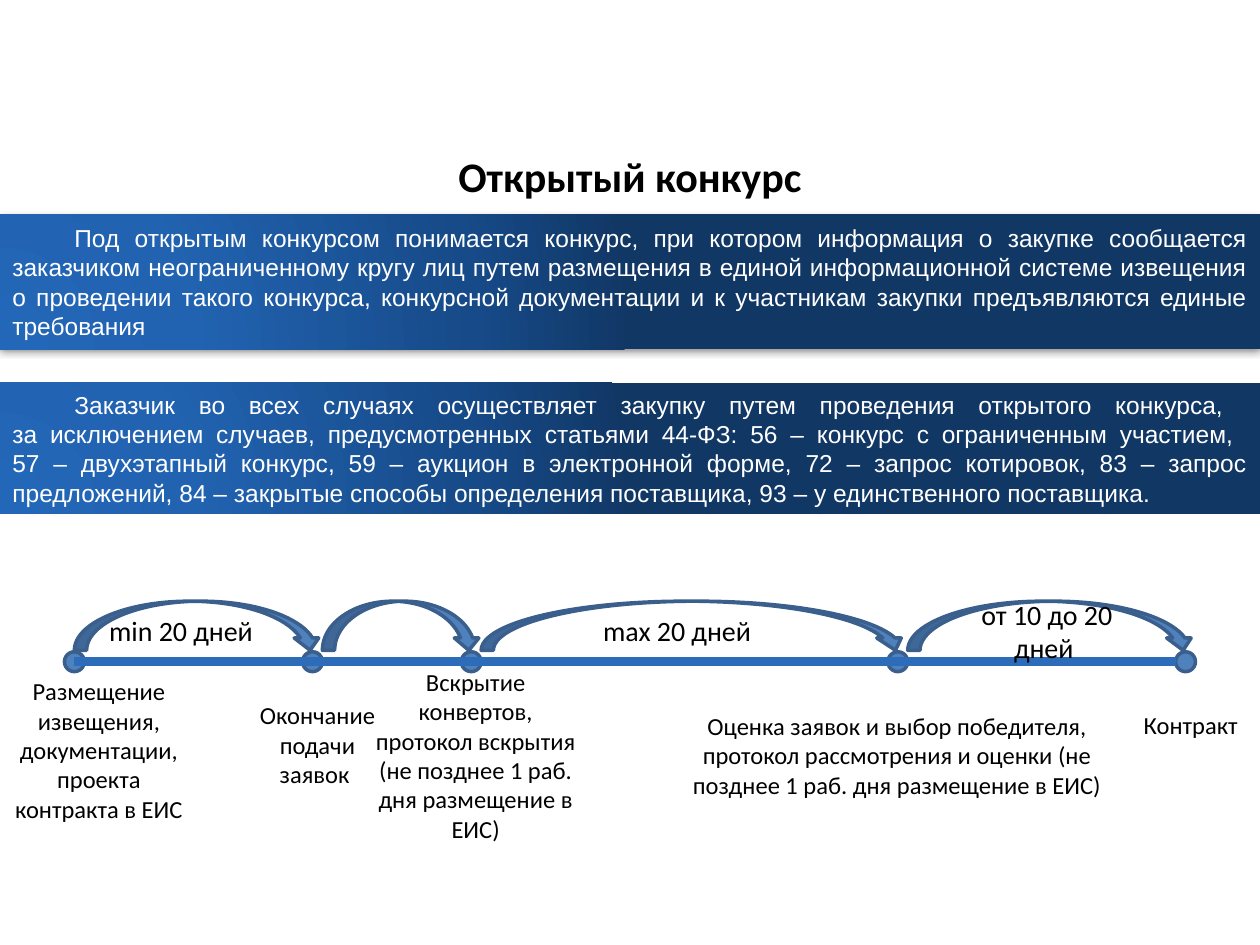
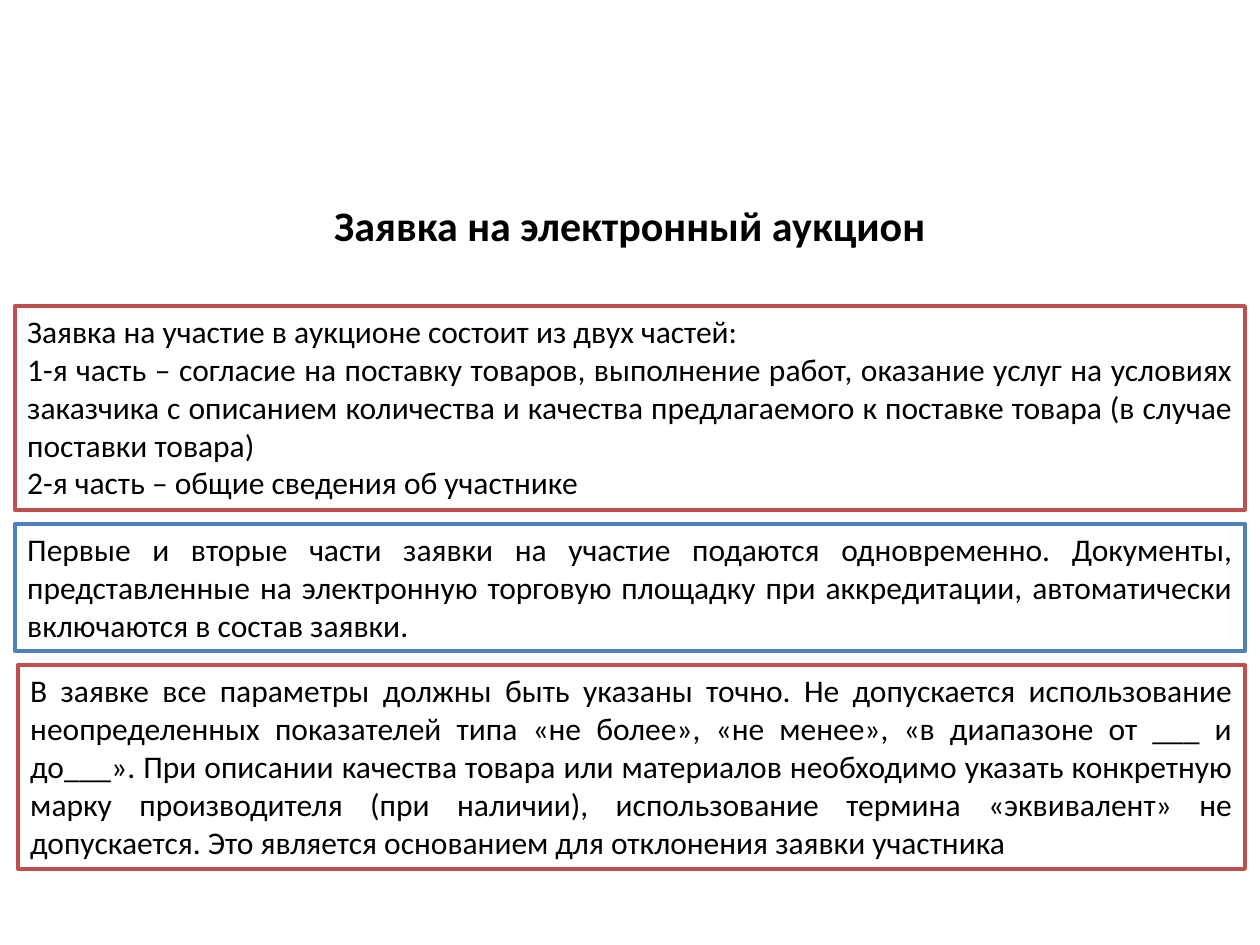
from dataclasses import dataclass
from lxml import etree
from pptx import Presentation
from pptx import util as u
from pptx.dml.color import RGBColor
from pptx.enum import shapes, text
from pptx.oxml import parse_xml
from pptx.oxml.ns import nsdecls, qn

ALIGN = text.PP_ALIGN
ANCHOR = text.MSO_ANCHOR


@dataclass(frozen=True)
class Theme:
    body_font: str = "Calibri"
    band_font: str = "Arial"
    black: str = "000000"
    white: str = "FFFFFF"
    blue: str = "4F81BD"
    blue_edge: str = "3A5F8C"
    axis: str = "2C6CB9"
    red: str = "C0504D"
    band_stops: tuple = ((0, "2367B8"), (30, "2263B1"), (75, "164A88"), (100, "113765"))
    title_size: int = 24
    box_size: int = 18
    duration_size: int = 16
    small_size: int = 14
    edge: int = 2
    axis_width: int = 5


THEME = Theme()
SLIDE_W, SLIDE_H = 25.4, 19.05


def write(sp, paragraphs, size, font=THEME.body_font, color=THEME.black, bold=False,
          align=ALIGN.CENTER, anchor=ANCHOR.MIDDLE, indent=0, grow=False):
    tf = sp.text_frame
    tf.word_wrap = True
    tf.vertical_anchor = anchor
    tf.auto_size = text.MSO_AUTO_SIZE.SHAPE_TO_FIT_TEXT if grow else text.MSO_AUTO_SIZE.NONE
    for i, line in enumerate(paragraphs):
        p = tf.paragraphs[0] if i == 0 else tf.add_paragraph()
        p.text = line
        p.alignment = align
        if indent:
            p._p.get_or_add_pPr().set("indent", str(u.Cm(indent)))
        for br in p._p.findall(qn("a:br")):
            etree.SubElement(br, qn("a:rPr"), sz=str(size * 100))
        for r in p.runs:
            r.font.size = u.Pt(size)
            r.font.name = font
            r.font.bold = bold
            r.font.color.rgb = RGBColor.from_string(color)


class Deck:
    def __init__(self, theme):
        self.theme = theme
        self.prs = Presentation()
        self.prs.slide_width, self.prs.slide_height = u.Cm(SLIDE_W), u.Cm(SLIDE_H)
        self.s = None

    def slide(self, title, title_top):
        self.s = self.prs.slides.add_slide(self.prs.slide_layouts[6])
        self.label([title], 1.27, title_top, 22.86, 3.18, self.theme.title_size, bold=True)

    def label(self, paragraphs, left, top, width, height, size, **fmt):
        sp = self.s.shapes.add_textbox(u.Cm(left), u.Cm(top), u.Cm(width), u.Cm(height))
        write(sp, paragraphs, size, **fmt)

    def shape(self, kind, left, top, width, height, fill, line):
        sp = self.s.shapes.add_shape(kind, u.Cm(left), u.Cm(top), u.Cm(width), u.Cm(height))
        sp.shadow.inherit = False
        sp.fill.solid()
        sp.fill.fore_color.rgb = RGBColor.from_string(fill)
        if line:
            sp.line.color.rgb = RGBColor.from_string(line)
            sp.line.width = u.Pt(self.theme.edge)
        else:
            sp.line.fill.background()
        return sp

    def band(self, content, top, height):
        t = self.theme
        sp = self.shape(shapes.MSO_SHAPE.RECTANGLE, 0, top, SLIDE_W, height, t.white, None)
        stops = "".join(f'<a:gs pos="{pos * 1000}"><a:srgbClr val="{color}"/></a:gs>'
                        for pos, color in t.band_stops)
        spPr = sp._element.spPr
        spPr.replace(spPr.find(qn("a:solidFill")), parse_xml(
            f'<a:gradFill {nsdecls("a")} rotWithShape="1"><a:gsLst>{stops}</a:gsLst>'
            '<a:path path="circle"><a:fillToRect l="5000" t="100000" r="120000" b="10000"/>'
            '</a:path></a:gradFill>'))
        spPr.find(qn("a:effectLst")).append(parse_xml(
            f'<a:outerShdw {nsdecls("a")} blurRad="{u.Pt(4)}" dist="{u.Pt(1.6)}" dir="5400000" '
            f'rotWithShape="0"><a:srgbClr val="{t.black}"><a:alpha val="42000"/></a:srgbClr>'
            '</a:outerShdw>'))
        write(sp, [content], t.small_size, font=t.band_font, color=t.white,
              align=ALIGN.JUSTIFY, indent=1.25, grow=True)

    def box(self, paragraphs, left, top, right, height, line):
        sp = self.shape(shapes.MSO_SHAPE.RECTANGLE, left, top, right - left, height,
                        self.theme.white, line)
        write(sp, paragraphs, self.theme.box_size, align=ALIGN.JUSTIFY,
              anchor=ANCHOR.TOP, grow=True)

    def milestone(self, x, y, radius):
        self.shape(shapes.MSO_SHAPE.FLOWCHART_CONNECTOR, x - radius, y - radius,
                   2 * radius, 2 * radius, self.theme.blue, self.theme.blue_edge)

    def arc(self, start, end, top, height):
        self.shape(shapes.MSO_SHAPE.CURVED_DOWN_ARROW, start, top, end - start, height,
                   self.theme.blue, self.theme.blue_edge)

    def axis(self, start, end, y):
        c = self.s.shapes.add_connector(shapes.MSO_CONNECTOR.STRAIGHT,
                                        u.Cm(start), u.Cm(y), u.Cm(end), u.Cm(y))
        c.line.color.rgb = RGBColor.from_string(self.theme.axis)
        c.line.width = u.Pt(self.theme.axis_width)
        etree.SubElement(c._element.spPr, qn("a:effectLst"))


def open_tender(deck):
    deck.slide("Открытый конкурс", 1.96)
    deck.band("Под открытым конкурсом понимается конкурс, при котором информация о закупке "
              "сообщается заказчиком неограниченному кругу лиц путем размещения в единой "
              "информационной системе извещения о проведении такого конкурса, конкурсной "
              "документации и к участникам закупки предъявляются единые требования", 4.32, 2.72)
    deck.band("Заказчик во всех случаях осуществляет закупку путем проведения открытого "
              "конкурса, \nза исключением случаев, предусмотренных статьями 44-ФЗ: 56 – конкурс "
              "с ограниченным участием, \n57 – двухэтапный конкурс, 59 – аукцион в электронной "
              "форме, 72 – запрос котировок, 83 – запрос предложений, 84 – закрытые способы "
              "определения поставщика, 93 – у единственного поставщика.", 7.72, 2.64)

    axis_y, radius, arc_top = 13.34, 0.2, 12.12
    milestones = [1.5, 6.3, 9.5, 18.1, 23.9]
    arc_ends = milestones[:1] + [x + radius for x in milestones[1:]]
    for x in milestones:
        deck.milestone(x, axis_y, radius)
    for start, end in zip(arc_ends, arc_ends[1:]):
        deck.arc(start, end, arc_top, 0.99)
    deck.axis(milestones[0], milestones[-1] - radius, axis_y)

    stages = [
        (["Размещение извещения, документации, проекта контракта в ЕИС"], -0.1, 13.72, 4.19, 2.79),
        (["Окончание подачи заявок "], 4.9, 13.51, 3, 3),
        (["Вскрытие конвертов, протокол вскрытия (не позднее 1 раб. дня размещение в ЕИС)"],
         7.29, 13.72, 4.6, 3),
        (["Оценка заявок и выбор победителя,",
          "протокол рассмотрения и оценки (не позднее 1 раб. дня размещение в ЕИС)"],
         13.69, 13.72, 8.79, 3),
        (["Контракт"], 22.71, 13.51, 2.59, 2.21),
    ]
    for stage in stages:
        deck.label(*stage, deck.theme.small_size)
    durations = [("min 20 дней ", 1.91), ("max 20 дней ", 11.91), ("от 10 до 20 дней ", 19.3)]
    for duration, left in durations:
        deck.label([duration], left, arc_top, 3.61, 1.19, deck.theme.duration_size)


def auction_bid(deck):
    t = deck.theme
    deck.slide("Заявка на электронный аукцион", 2.95)
    boxes = [
        (["Заявка на участие в аукционе состоит из двух частей:",
          "1-я часть – согласие на поставку товаров, выполнение работ, оказание услуг на "
          "условиях заказчика с описанием количества и качества предлагаемого к поставке "
          "товара (в случае поставки товара)",
          "2-я часть – общие сведения об участнике"], 0.3, 4.11, t.red),
        (["Первые и вторые части заявки на участие подаются одновременно. Документы, "
          "представленные на электронную торговую площадку при аккредитации, автоматически "
          "включаются в состав заявки. "], 0.3, 2.57, t.blue),
        (["В заявке все параметры должны быть указаны точно. Не допускается использование "
          "неопределенных показателей типа «не более», «не менее», «в диапазоне от ___ и "
          "до___». При описании качества товара или материалов необходимо указать конкретную "
          "марку производителя (при наличии), использование термина «эквивалент» не "
          "допускается. Это является основанием для отклонения заявки участника"],
         0.36, 4.11, t.red),
    ]
    top, gap = 6.17, 0.28
    for paragraphs, left, height, line in boxes:
        deck.box(paragraphs, left, top, 25.1, height, line)
        top += height + gap


def main():
    deck = Deck(THEME)
    open_tender(deck)
    auction_bid(deck)
    deck.prs.save("out.pptx")


if __name__ == "__main__":
    main()
